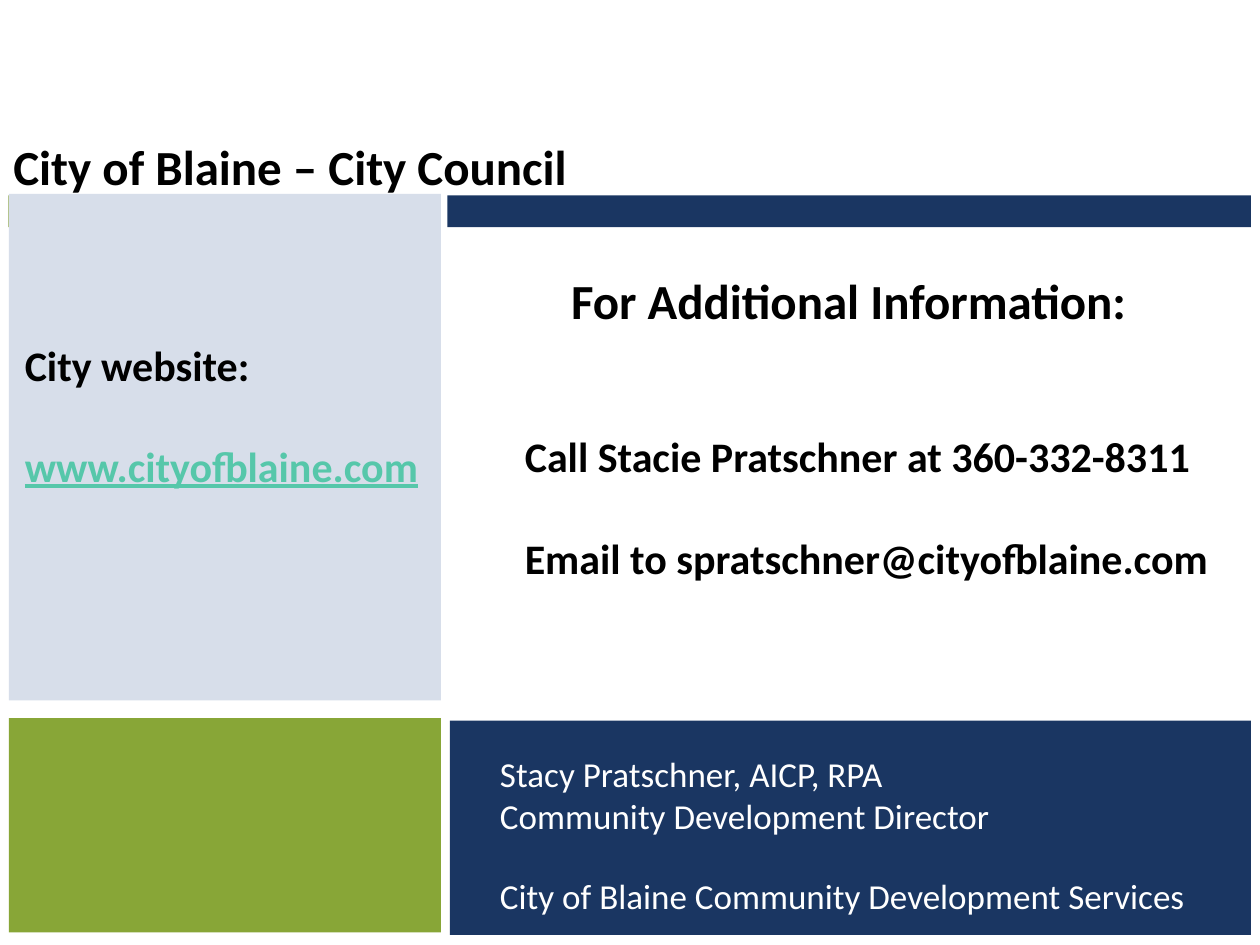
from pptx import Presentation
from pptx.dml.color import RGBColor
from pptx.enum import shapes, text
from pptx.util import Cm, Pt

NAVY, GREEN, PALE = "1A3662", "88A637", "D7DEEA"
BLACK, WHITE, TEAL = "000000", "FFFFFF", "56C7AA"


def color(value):
    return RGBColor.from_string(value)


def add_block(slide, left, top, width, height, fill):
    sp = slide.shapes.add_shape(shapes.MSO_SHAPE.RECTANGLE,
                                Cm(left), Cm(top), Cm(width), Cm(height))
    sp.shadow.inherit = False
    sp.fill.solid()
    sp.fill.fore_color.rgb = color(fill)
    sp.line.fill.background()


def add_text(slide, left, top, width, height, lines, ink=BLACK, bold=True):
    """Each line is (text, size, space before); returns its paragraphs."""
    tf = slide.shapes.add_textbox(Cm(left), Cm(top), Cm(width), Cm(height)).text_frame
    tf.word_wrap = True
    for i, (line, size, gap) in enumerate(lines):
        p = tf.paragraphs[0] if i == 0 else tf.add_paragraph()
        p.text = line
        p.space_before = Pt(gap)
        p.font.name = "Calibri"
        p.font.size = Pt(size)
        p.font.bold = bold
        p.font.color.rgb = color(ink)
    return tf.paragraphs


def main():
    prs = Presentation()
    prs.slide_width, prs.slide_height = Cm(25.4), Cm(19.05)
    slide = prs.slides.add_slide(prs.slide_layouts[6])

    # Header band
    for left, width, fill in ((9.02, 16.2, NAVY), (0.17, 4.27, "86A13C"), (4.62, 4.27, PALE)):
        add_block(slide, left, 3.94, width, 0.64, fill)

    # Panels
    add_block(slide, 9.07, 14.53, 16.15, 4.32, NAVY)
    add_block(slide, 0.18, 14.48, 8.71, 4.32, GREEN)
    add_block(slide, 0.18, 3.91, 8.71, 10.21, PALE)

    # Title
    add_text(slide, 0.02, 2.62, 16.69, 1.45, [("City of Blaine – City Council", 28, 0)])

    # Contact details
    heading, *details = add_text(slide, 9.37, 5.33, 15.47, 8.56, [
        ("For Additional Information:", 28, 0),
        ("Call Stacie Pratschner at 360-332-8311", 24, 58),
        ("Email to spratschner@cityofblaine.com", 24, 29),
    ])
    heading.alignment = text.PP_ALIGN.CENTER
    for p in details:
        p._p.get_or_add_pPr().set("marL", str(Cm(0.96)))

    # Website
    _, address = add_text(slide, 0.25, 6.71, 8.71, 3.33, [
        ("City website:", 24, 0),
        ("www.cityofblaine.com", 24, 29),
    ])
    address.font.color.rgb = color(TEAL)
    address.font.underline = True

    # Signature
    add_text(slide, 9.83, 15.04, 14.58, 3.58, [
        ("Stacy Pratschner, AICP, RPA", 20, 0),
        ("Community Development Director", 20, 0),
        ("City of Blaine Community Development Services", 20, 22),
    ], WHITE, False)

    prs.save("out.pptx")


if __name__ == "__main__":
    main()
